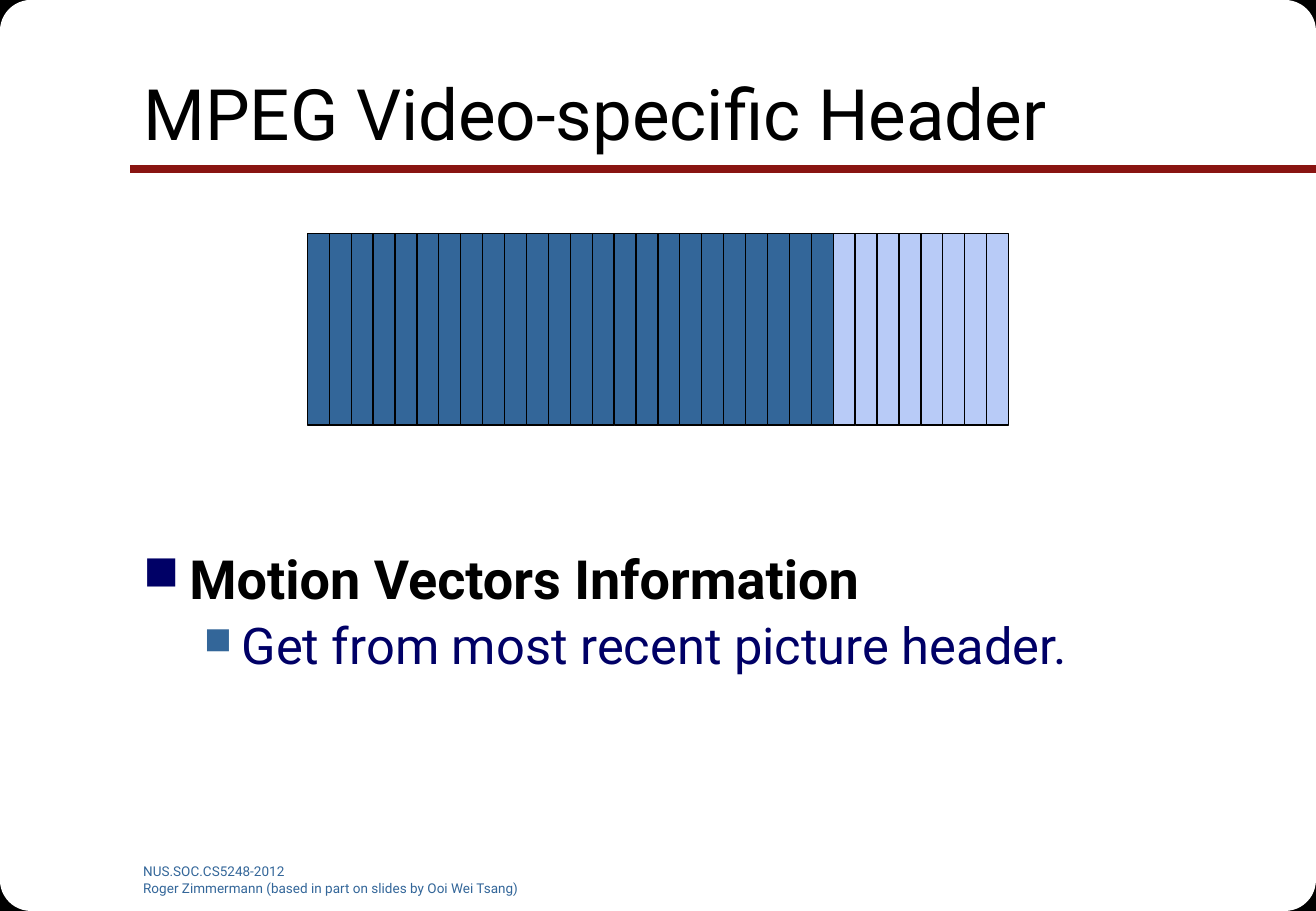
import pptx
import pptx.util
import pptx.dml.color
import pptx.enum.shapes
import pptx.enum.text
import pptx.oxml.ns
import lxml.etree

Inches = pptx.util.Inches
Pt = pptx.util.Pt
SHAPES = pptx.enum.shapes.MSO_SHAPE
ANCHOR = pptx.enum.text.MSO_ANCHOR
LEFT = pptx.enum.text.PP_ALIGN.LEFT

WIDTH, HEIGHT = 10.83, 7.5
FONT = "Roboto"

TITLE = ("MPEG Video-specific Header", {"size": 42, "color": "000000"})
FOOTER = ["NUS.SOC.CS5248-2012",
          "Roger Zimmermann (based in part on slides by Ooi Wei Tsang)"]
FOOTER_FORMAT = {"size": 8, "color": "336699"}
POINTS = [
    {"text": "Motion Vectors Information",
     "format": {"size": 32, "color": "000000", "bold": True},
     "level": 0, "margin": 0.38, "hanging": 0.38, "before": 6.4,
     "bullet": ("000066", 90)},
    {"text": "Get from most recent picture header.",
     "format": {"size": 30, "color": "000066", "bold": False},
     "level": 1, "margin": 0.81, "hanging": 0.31, "before": 6,
     "bullet": ("336699", 75)},
]

CORNERS = [
    (SHAPES.RECTANGLE, 0.47, 0.44, "000000", "000000"),
    (SHAPES.ROUNDED_RECTANGLE, 1.66, 1.53, "FFFFFF", None),
]
RULE = {"start": 10.83, "end": 1.07, "y": 1.39, "color": "891411", "width": 4.5}
BITS = ["336699"] * 24 + ["B8CBF7"] * 8
BITS_LEFT, BITS_TOP, BITS_WIDTH, BITS_HEIGHT = 2.53, 1.92, 5.77, 1.58


def rgb(value):
    return pptx.dml.color.RGBColor.from_string(value)


def inches(*values):
    return [Inches(value) for value in values]


def add_block(page, kind, place, fill, line):
    block = page.shapes.add_shape(kind, *inches(*place))
    block.shadow.inherit = False
    block.fill.solid()
    block.fill.fore_color.rgb = rgb(fill)
    if line:
        block.line.color.rgb = rgb(line)
        block.line.width = Pt(0.75)
    else:
        block.line.fill.background()


def write(para, text, format_values):
    para.alignment = LEFT
    span = para.add_run()
    span.text = text
    values = {"name": FONT, **format_values}
    span.font.color.rgb = rgb(values.pop("color"))
    values["size"] = Pt(values["size"])
    for name, value in values.items():
        setattr(span.font, name, value)


def add_child(parent, tag, **attributes):
    return lxml.etree.SubElement(parent, pptx.oxml.ns.qn(tag), **attributes)


def add_bullet(para, margin, hanging, color, percent):
    properties = para._p.get_or_add_pPr()
    properties.set("marL", str(Inches(margin)))
    properties.set("indent", str(-Inches(hanging)))
    add_child(add_child(properties, "a:buClr"), "a:srgbClr", val=color)
    add_child(properties, "a:buSzPct", val=str(percent * 1000))
    add_child(properties, "a:buChar", char="■")


def add_text_box(page, *place):
    frame = page.shapes.add_textbox(*inches(*place)).text_frame
    frame.word_wrap = True
    return frame


def next_para(frame, index):
    return frame.add_paragraph() if index else frame.paragraphs[0]


def add_frame(page):
    for kind, width, height, fill, line in CORNERS:
        for left in (0, WIDTH - width):
            for top in (0, HEIGHT - height):
                add_block(page, kind, (left, top, width, height), fill, line)
    rule = page.shapes.add_connector(
        pptx.enum.shapes.MSO_CONNECTOR.STRAIGHT,
        *inches(RULE["start"], RULE["y"], RULE["end"], RULE["y"]))
    rule.line.color.rgb = rgb(RULE["color"])
    rule.line.width = Pt(RULE["width"])
    add_child(rule._element.spPr, "a:effectLst")


def add_title(page):
    title = page.shapes.title
    title.left, title.top, title.width, title.height = inches(1.08, 0.3, 9.21, 1.25)
    title.text_frame.vertical_anchor = ANCHOR.MIDDLE
    write(title.text_frame.paragraphs[0], *TITLE)


def add_points(page):
    frame = add_text_box(page, 1.08, 4.5, 9.21, 2.2)
    for index, point in enumerate(POINTS):
        para = next_para(frame, index)
        para.level = point["level"]
        para.line_spacing = 0.9
        para.space_before = Pt(point["before"])
        write(para, point["text"], point["format"])
        add_bullet(para, point["margin"], point["hanging"], *point["bullet"])


def add_footer(page):
    frame = add_text_box(page, 1.08, 7.06, 3.42, 0.28)
    for index, text in enumerate(FOOTER):
        write(next_para(frame, index), text, FOOTER_FORMAT)


def add_bits(page):
    width = BITS_WIDTH / len(BITS)
    for index, fill in enumerate(BITS):
        place = (BITS_LEFT + index * width, BITS_TOP, width, BITS_HEIGHT)
        add_block(page, SHAPES.RECTANGLE, place, fill, "000000")


def main():
    deck = pptx.Presentation()
    deck.slide_width, deck.slide_height = inches(WIDTH, HEIGHT)
    page = deck.slides.add_slide(deck.slide_layouts[5])
    page.background.fill.solid()
    page.background.fill.fore_color.rgb = rgb("FFFFFF")
    for build in (add_frame, add_footer, add_title, add_points, add_bits):
        build(page)
    tree = page.shapes._spTree
    tree.remove(page.shapes.title._element) if page.shapes.title is None else tree.append(page.shapes.title._element)
    deck.save("out.pptx")


if __name__ == "__main__":
    main()
